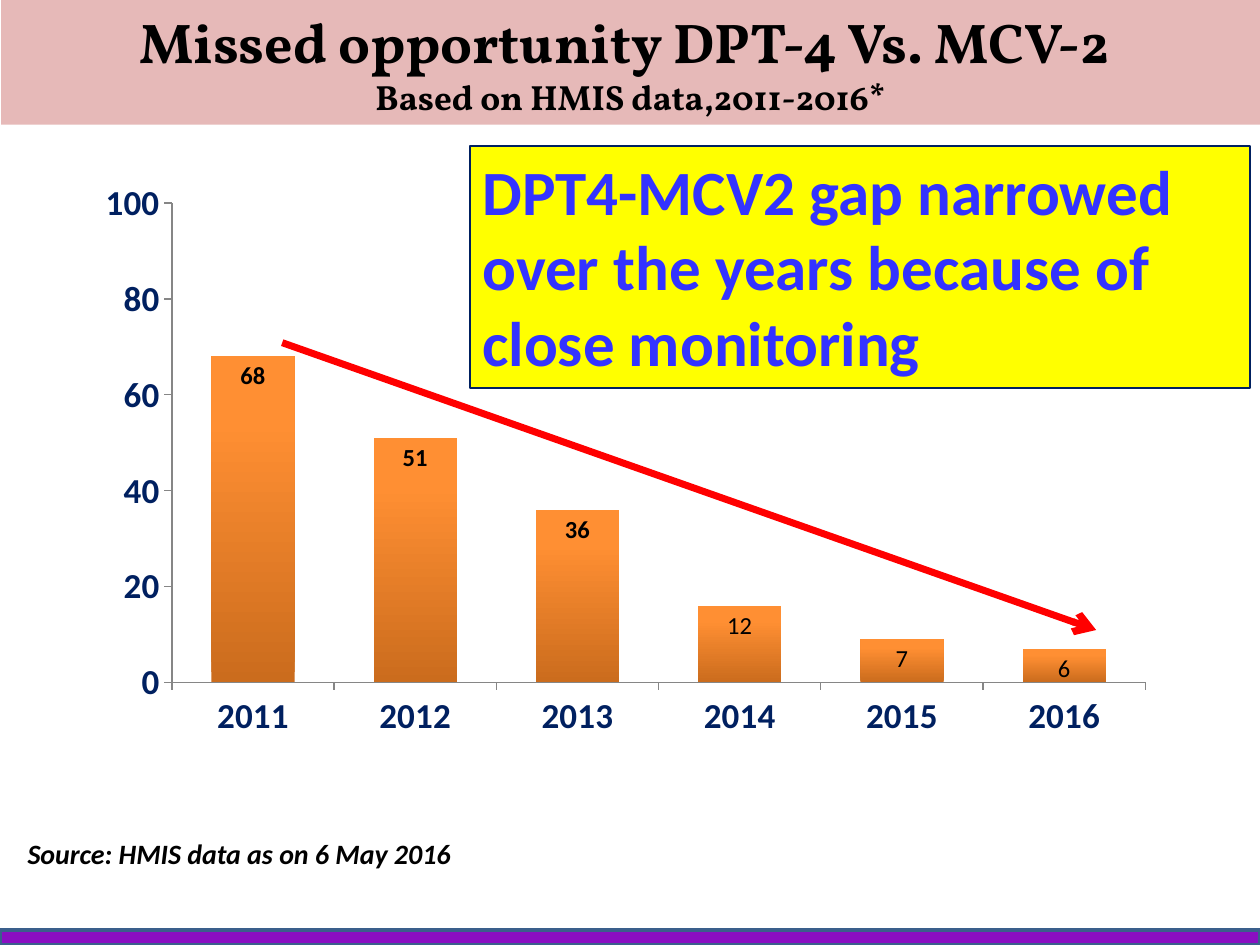
"""Build the slide on the DPT-4 and MCV-2 gap."""
from dataclasses import dataclass

from lxml.etree import SubElement
from pptx import Presentation
from pptx.chart.data import CategoryChartData
from pptx.dml.color import RGBColor
from pptx.enum.chart import XL_CHART_TYPE as Kind, XL_LABEL_POSITION as Spot, XL_TICK_MARK as Tick
from pptx.enum.shapes import MSO_CONNECTOR as Link, MSO_SHAPE as Form
from pptx.enum.text import MSO_ANCHOR as Anchor, PP_ALIGN as Align
from pptx.oxml.ns import qn
from pptx.util import Inches, Pt

NAVY, BLACK, RED = "002060", "000000", "FF0000"
YEARS = ["2011", "2012", "2013", "2014", "2015", "2016"]
GAPS = [68, 51, 36, 16, 9, 7]
NOTES = {3: "12", 4: "7", 5: "6"}
PLOT = {"x": 0.077, "y": 0.06, "w": 0.909, "h": 0.781}


@dataclass
class Line:
    text: str
    size: int
    color: str = BLACK
    face: str = "Calibri"
    slant: bool = False


@dataclass
class Box:
    left: float
    top: float
    width: float
    height: float
    lines: tuple = ()
    fill: str = ""
    edge: str = ""
    weight: float = 0
    align: Align = Align.LEFT
    anchor: Anchor = Anchor.TOP


BOXES = [
    Box(0, 7.38, 10, 0.12, fill="8A0EC2", edge="3A5F8C", weight=2),
    Box(0.01, 0, 9.99, 0.99, (
        Line("Missed opportunity DPT-4 Vs. MCV-2 ", 32, face="Vollkorn"),
        Line("Based on HMIS data,2011-2016*", 20, face="Vollkorn"),
    ), "E6B9B8", align=Align.CENTER, anchor=Anchor.MIDDLE),
    Box(0.12, 6.59, 9.42, 0.37, (Line("Source: HMIS data as on 6 May 2016", 16, slant=True),)),
    Box(3.73, 1.16, 6.19, 1.92, (
        Line("DPT4-MCV2 gap narrowed over the years because of close monitoring", 36, "3333FF"),
    ), "FFFF00", NAVY, 0.75),
]


def paint(target, color: str) -> None:
    """Give a colour format or a fill its hex colour."""
    if hasattr(target, "solid"):
        target.solid()
        target = target.fore_color
    target.rgb = RGBColor.from_string(color)


def style(font, size: int, color: str, bold: bool = True, face: str = "Calibri") -> None:
    """Set the look of a font."""
    font.size, font.bold, font.name = Pt(size), bold, face
    paint(font.color, color)


def draw_box(slide, box: Box) -> None:
    """Draw a rectangle with its text."""
    place = [Inches(n) for n in (box.left, box.top, box.width, box.height)]
    if box.fill:
        shape = slide.shapes.add_shape(Form.RECTANGLE, *place)
        shape.shadow.inherit = False
        paint(shape.fill, box.fill)
    else:
        shape = slide.shapes.add_textbox(*place)
    if box.edge:
        paint(shape.line.fill, box.edge)
        shape.line.width = Pt(box.weight)
    else:
        shape.line.fill.background()
    frame = shape.text_frame
    frame.word_wrap, frame.vertical_anchor = True, box.anchor
    para = frame.paragraphs[0]
    para.alignment = box.align
    for spot, line in enumerate(box.lines):
        if spot:
            para.add_line_break()
        run = para.add_run()
        run.text = line.text
        style(run.font, line.size, line.color, face=line.face)
        run.font.italic = line.slant


def draw_axis(axis) -> None:
    """Style one chart axis."""
    axis.has_major_gridlines = False
    axis.major_tick_mark, axis.minor_tick_mark = Tick.OUTSIDE, Tick.NONE
    style(axis.tick_labels.font, 20, NAVY)
    paint(axis.format.line.fill, "868686")
    axis.format.line.width = Pt(0.75)


def draw_chart(slide) -> None:
    """Draw the column chart of yearly gaps."""
    data = CategoryChartData(number_format="#,##0")
    data.categories = YEARS
    data.add_series("Series 1", GAPS)
    place = [Inches(n) for n in (0.71, 1.32, 8.5, 4.87)]
    chart = slide.shapes.add_chart(Kind.COLUMN_CLUSTERED, *place, data).chart
    chart.has_title = chart.has_legend = False
    style(chart.font, 18, BLACK, False)
    for axis in (chart.category_axis, chart.value_axis):
        draw_axis(axis)
    scale = chart.value_axis
    scale.minimum_scale, scale.maximum_scale, scale.major_unit = 0, 100, 20
    scale.tick_labels.number_format = "#,##0"
    scale.tick_labels.number_format_is_linked = False

    plot = chart.plots[0]
    plot.gap_width, plot.overlap, plot.vary_by_categories = 95, -100, False
    bars = plot.series[0]
    fill = bars.format.fill
    fill.gradient()
    fill.gradient_angle = 90
    for stop, (place, color) in zip(fill.gradient_stops, ((0, "CB6C1D"), (0.8, "FF8F33"))):
        stop.position = place
        paint(stop.color, color)
    labels = bars.data_labels
    labels.show_value, labels.position = True, Spot.INSIDE_END
    labels.number_format, labels.number_format_is_linked = "#,##0", False
    style(labels.font, 14, BLACK)
    for spot, text in NOTES.items():
        label = bars.points[spot].data_label
        run = label.text_frame.paragraphs[0].add_run()
        run.text = text
        style(run.font, 14, BLACK, False)
        label.position = Spot.INSIDE_END
    set_plot(chart)


def set_plot(chart) -> None:
    """Fix the inner plot area."""
    area = chart.element.find(".//" + qn("c:plotArea"))
    for old in area.findall(qn("c:layout")):
        area.remove(old)
    layout = SubElement(area, qn("c:layout"))
    area.insert(0, layout)
    manual = SubElement(layout, qn("c:manualLayout"))
    parts = {"layoutTarget": "inner", "xMode": "edge", "yMode": "edge", **PLOT}
    for name, value in parts.items():
        SubElement(manual, qn("c:" + name)).set("val", str(value))


def draw_arrow(slide) -> None:
    """Draw the falling trend arrow."""
    ends = [Inches(n) for n in (2.24, 2.72, 8.7, 5)]
    arrow = slide.shapes.add_connector(Link.STRAIGHT, *ends)
    paint(arrow.line.fill, RED)
    arrow.line.width = Pt(4)
    SubElement(arrow.line._get_or_add_ln(), qn("a:tailEnd")).set("type", "arrow")
    SubElement(arrow.element.spPr, qn("a:effectLst"))


def main() -> None:
    """Build and save the slide."""
    deck = Presentation()
    deck.slide_width, deck.slide_height = Inches(10), Inches(7.5)
    slide = deck.slides.add_slide(deck.slide_layouts[6])
    base, *rest = BOXES
    draw_box(slide, base)
    draw_chart(slide)
    for box in rest:
        draw_box(slide, box)
    draw_arrow(slide)
    deck.save("out.pptx")


if __name__ == "__main__":
    main()
